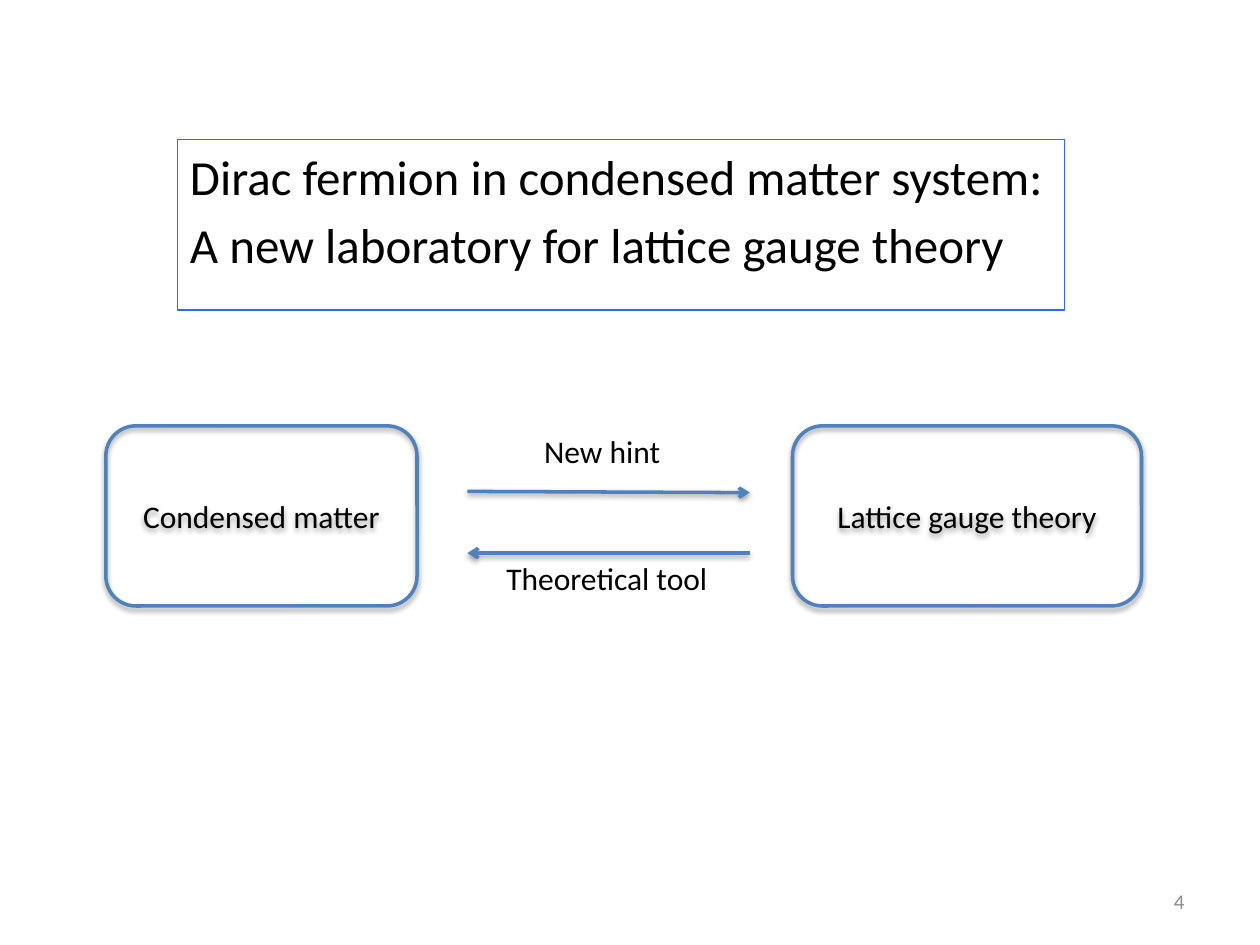
from lxml import etree
from pptx import Presentation
from pptx.dml.color import RGBColor
from pptx.enum.shapes import MSO_CONNECTOR, MSO_SHAPE
from pptx.enum.text import MSO_ANCHOR, PP_ALIGN
from pptx.oxml import parse_xml
from pptx.oxml.ns import qn
from pptx.util import Inches, Pt

ROUNDED = MSO_SHAPE.ROUNDED_RECTANGLE
STRAIGHT = MSO_CONNECTOR.STRAIGHT
MIDDLE, TOP = MSO_ANCHOR.MIDDLE, MSO_ANCHOR.TOP
LEFT, CENTER, RIGHT = PP_ALIGN.LEFT, PP_ALIGN.CENTER, PP_ALIGN.RIGHT

FONT = "Calibri"
COLORS = {"text": "000000", "number": "8C8C8C", "frame": "3366FF", "diagram": "4F81BD"}

TITLE = ["Dirac fermion in condensed matter system:", "A new laboratory for lattice gauge theory"]
TITLE_AREA = (1.41, 1.11, 7.04, 1.35)
PAGE_NUMBER = ("4", (7.17, 6.95, 2.33, 0.4))

FIELD_TOP, FIELD_HEIGHT = 3.38, 1.43
FIELDS = [("Condensed matter", 0.84, 2.47), ("Lattice gauge theory", 6.29, 2.77)]  # text, left, width
ARROWS = [((3.71, 3.9), (5.95, 3.91)), ((5.95, 4.39), (3.71, 4.39))]  # from, to
LABELS = [("New hint", (4.22, 3.38, 1.18, 0.4)), ("Theoretical tool", (3.92, 4.39, 1.89, 0.4))]

SHADOW = (
    '<a:effectLst xmlns:a="http://schemas.openxmlformats.org/drawingml/2006/main">'
    '<a:outerShdw blurRad="40000" dist="20000" dir="5400000" rotWithShape="0">'
    '<a:srgbClr val="000000"><a:alpha val="38000"/></a:srgbClr>'
    "</a:outerShdw></a:effectLst>"
)


def inches(values):
    return [Inches(value) for value in values]


def write(shape, lines, size, color="text", align=LEFT, anchor=TOP, wrap=True):
    frame = shape.text_frame
    frame.word_wrap = wrap
    frame.vertical_anchor = anchor
    for index, line in enumerate(lines):
        para = frame.paragraphs[0] if index == 0 else frame.add_paragraph()
        para.alignment = align
        span = para.add_run()
        span.text = line
        span.font.name = FONT
        span.font.size = Pt(size)
        span.font.color.rgb = RGBColor.from_string(COLORS[color])


def outline(shape, color, width):
    shape.line.color.rgb = RGBColor.from_string(COLORS[color])
    shape.line.width = Pt(width)


def add_shadow(shape):
    shape._element.spPr.append(parse_xml(SHADOW))


def add_title(page):
    box = page.shapes.add_textbox(*inches(TITLE_AREA))
    outline(box, "frame", 0.75)
    write(box, TITLE, 28)
    for para in box.text_frame.paragraphs:
        para.space_before = Pt(5.6)


def add_field(page, text, left, width):
    box = page.shapes.add_shape(ROUNDED, *inches((left, FIELD_TOP, width, FIELD_HEIGHT)))
    box.fill.background()
    outline(box, "diagram", 2)
    add_shadow(box)
    write(box, [text], 18, align=CENTER, anchor=MIDDLE)


def add_arrow(page, start, end):
    arrow = page.shapes.add_connector(STRAIGHT, *inches(start + end))
    outline(arrow, "diagram", 2)
    etree.SubElement(arrow.line._get_or_add_ln(), qn("a:tailEnd"), type="arrow")
    add_shadow(arrow)


def main():
    deck = Presentation()
    deck.slide_width, deck.slide_height = Inches(10), Inches(7.5)
    page = deck.slides.add_slide(deck.slide_layouts[6])

    add_title(page)
    number, area = PAGE_NUMBER
    write(page.shapes.add_textbox(*inches(area)), [number], 12, "number", RIGHT, MIDDLE)
    for field in FIELDS:
        add_field(page, *field)
    for start, end in ARROWS:
        add_arrow(page, start, end)
    for text, area in LABELS:
        write(page.shapes.add_textbox(*inches(area)), [text], 18, wrap=False)

    deck.save("out.pptx")


if __name__ == "__main__":
    main()
